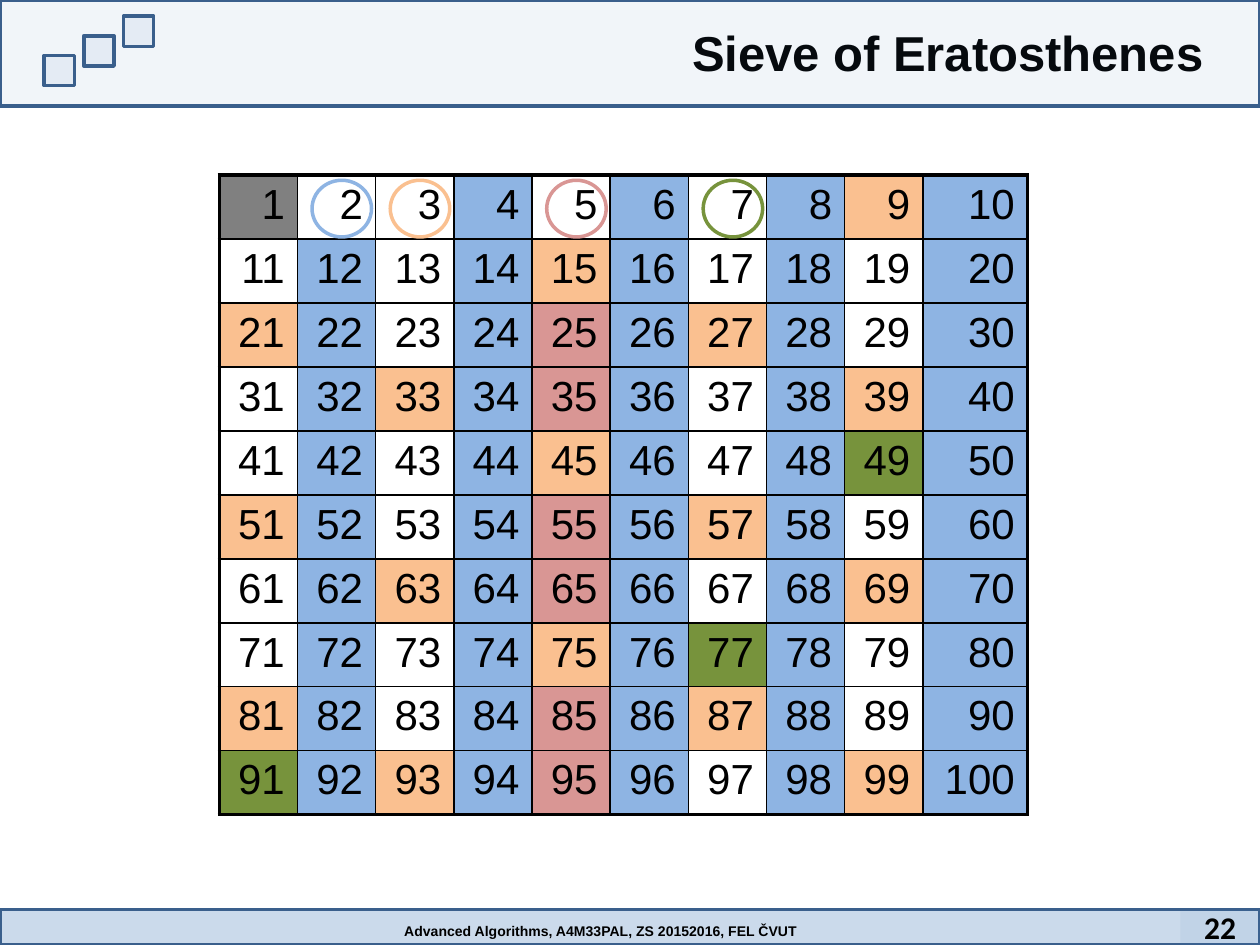
from pptx import Presentation
from pptx.dml.color import RGBColor
from pptx.enum.shapes import MSO_SHAPE as Shape
from pptx.enum.text import MSO_ANCHOR as Anchor, MSO_AUTO_SIZE as AutoSize, PP_ALIGN as Align
from pptx.oxml.ns import qn
from pptx.util import Pt
from lxml.etree import SubElement

BLACK = RGBColor(0x00, 0x00, 0x00)
GREY = RGBColor(0x80, 0x80, 0x80)
BAND_BLUE = RGBColor(0x4F, 0x81, 0xBD)
BAND_LINE = RGBColor(0x3A, 0x5F, 0x8C)
PRIME_COLOURS = {
    2: RGBColor(0x8E, 0xB4, 0xE3),
    3: RGBColor(0xFA, 0xC0, 0x90),
    5: RGBColor(0xD9, 0x96, 0x94),
    7: RGBColor(0x77, 0x93, 0x3C),
}
SIZE = 10
THIN, THICK = 1, 2.25


def format_text(paragraph, size, font="Arial", bold=False, align=Align.LEFT):
    paragraph.alignment = align
    for run in paragraph.runs:
        run.font.size = Pt(size)
        run.font.name = font
        run.font.bold = bold
        run.font.color.rgb = BLACK


def add_tinted_box(slide, left, top, width, height, opacity, outlined=True):
    box = slide.shapes.add_shape(Shape.RECTANGLE, Pt(left), Pt(top), Pt(width), Pt(height))
    box.shadow.inherit = False
    box.fill.solid()
    box.fill.fore_color.rgb = BAND_BLUE
    colour = box.fill._xPr.find(qn("a:solidFill"))[0]
    SubElement(colour, qn("a:alpha")).set("val", str(opacity * 1000))
    if outlined:
        box.line.color.rgb = BAND_LINE
        box.line.width = Pt(2)
    else:
        box.line.fill.background()
    return box


def add_title(slide, left, top, width, height):
    title = slide.shapes.title
    title.left, title.top, title.width, title.height = Pt(left), Pt(top), Pt(width), Pt(height)
    frame = title.text_frame
    frame.text = "Sieve of Eratosthenes"
    frame.auto_size = AutoSize.NONE
    frame.vertical_anchor = Anchor.TOP
    format_text(frame.paragraphs[0], 28, bold=True, align=Align.RIGHT)


def sieve_colour(number):
    """Colour of the first prime that crosses the number out, or None."""
    if number == 1:
        return GREY
    for prime, colour in PRIME_COLOURS.items():
        if number > prime and number % prime == 0:
            return colour
    return None


def set_borders(cell, row, col):
    """Thin grid lines, with a thick frame around the whole sieve."""
    outer_edges = {"L": col == 0, "R": col == SIZE - 1, "T": row == 0, "B": row == SIZE - 1}
    properties = cell._tc.get_or_add_tcPr()
    for side, outer in outer_edges.items():
        border = SubElement(properties, qn(f"a:ln{side}"))
        border.set("w", str(Pt(THICK if outer else THIN)))
        SubElement(SubElement(border, qn("a:solidFill")), qn("a:srgbClr")).set("val", str(BLACK))


def add_sieve(slide, left, top, width, height):
    column_width, row_height = 44.7, height / SIZE
    sieve = slide.shapes.add_table(SIZE, SIZE, Pt(left), Pt(top), Pt(width), Pt(height)).table
    sieve.first_row = sieve.horz_banding = False
    for col in range(SIZE):
        is_last = col == SIZE - 1
        sieve.columns[col].width = Pt(width - column_width * col if is_last else column_width)
    for row in range(SIZE):
        sieve.rows[row].height = Pt(row_height)
        for col in range(SIZE):
            number = row * SIZE + col + 1
            cell = sieve.cell(row, col)
            cell.text_frame.text = str(number)
            format_text(cell.text_frame.paragraphs[0], 24, align=Align.RIGHT)
            set_borders(cell, row, col)
            colour = sieve_colour(number)
            if colour is None:
                cell.fill.background()
            else:
                cell.fill.solid()
                cell.fill.fore_color.rgb = colour

    for prime, colour in PRIME_COLOURS.items():
        ring_left = left + (prime - 1) * column_width + 8.3
        ring = slide.shapes.add_shape(Shape.OVAL, Pt(ring_left), Pt(top + 2.9), Pt(34), Pt(32.4))
        ring.shadow.inherit = False
        ring.fill.background()
        ring.line.color.rgb = colour
        ring.line.width = Pt(2)


def add_header(slide, left, top, width, height):
    add_tinted_box(slide, left, top, width, height, 8)
    for step in range(3):
        add_tinted_box(slide, left + 25.2 + 22.7 * step, top + 31.7 - 11.2 * step, 17.3, 17.3, 8)


def add_footer(slide, left, top, width, height):
    add_tinted_box(slide, left, top, width, height, 29)

    course = slide.shapes.add_textbox(Pt(left + 223.9), Pt(top + 3.6), Pt(242.6), Pt(17.3))
    course.text_frame.word_wrap = False
    course.text_frame.text = "Advanced Algorithms, A4M33PAL, ZS 20152016, FEL ČVUT"
    format_text(course.text_frame.paragraphs[0], 8, bold=True)

    number_width = 45.4
    page = add_tinted_box(slide, left + width - number_width, top, number_width, height, 8,
                          outlined=False)
    page.text_frame.text = "22"
    page.text_frame.vertical_anchor = Anchor.MIDDLE
    format_text(page.text_frame.paragraphs[0], 18, "Calibri", bold=True, align=Align.CENTER)


def main():
    presentation = Presentation()
    presentation.slide_width, presentation.slide_height = Pt(720), Pt(540)
    slide = presentation.slides.add_slide(presentation.slide_layouts[5])
    add_title(slide, 223.9, 9.4, 470.9, 41)
    add_sieve(slide, 125.3, 100.1, 462, 365.5)
    add_header(slide, 0, 0, 720, 60.5)
    add_footer(slide, 0, 519.8, 720, 20.2)
    presentation.save("out.pptx")


if __name__ == "__main__":
    main()
